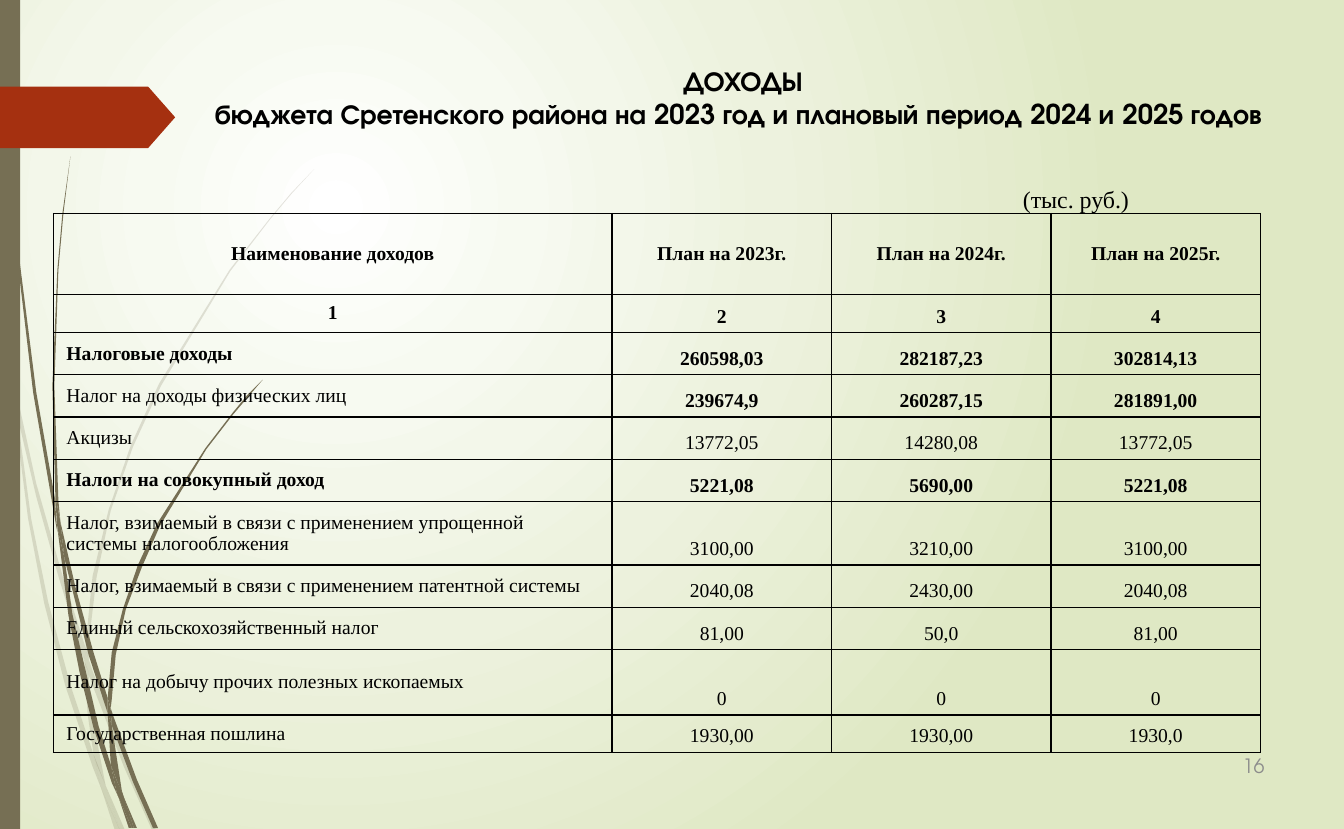
"""Build the slide with the district budget revenue table."""
from dataclasses import dataclass

from lxml import etree
from pptx import Presentation
from pptx.dml.color import RGBColor
from pptx.enum.shapes import MSO_SHAPE
from pptx.enum.text import MSO_ANCHOR, MSO_AUTO_SIZE, PP_ALIGN
from pptx.oxml import parse_xml
from pptx.oxml.ns import qn
from pptx.util import Inches, Pt

LEFT, CENTER, RIGHT = PP_ALIGN.LEFT, PP_ALIGN.CENTER, PP_ALIGN.RIGHT
TOP, MIDDLE, BOTTOM = MSO_ANCHOR.TOP, MSO_ANCHOR.MIDDLE, MSO_ANCHOR.BOTTOM
RECTANGLE, TAG = MSO_SHAPE.RECTANGLE, MSO_SHAPE.PENTAGON
FIXED_SIZE = MSO_AUTO_SIZE.NONE
DRAWING_NS = "http://schemas.openxmlformats.org/drawingml/2006/main"


@dataclass(frozen=True)
class Theme:
    """Colours, fonts and type sizes of the slide."""
    ink: str = "000000"
    muted: str = "8C8C8C"
    olive: str = "766F54"
    red: str = "A53010"
    glow: tuple = ((0, "FFFFFF"), (24, "F7FAF1"), (36, "F3F7EA"),
                   (55, "EDF2DE"), (100, "DFE8C4"))
    heading_font: str = "TeX Gyre Adventor"
    body_font: str = "Times New Roman"
    title_size: float = 19.6
    unit_size: float = 17.1
    number_size: float = 14.1
    table_size: float = 14
    border_width: float = 1


THEME = Theme()

TITLE = ("ДОХОДЫ\nбюджета Сретенского района на 2023 год "
         "и плановый период 2024 и 2025 годов ")
COLUMN_WIDTHS = (5.55, 2.18, 2.18, 2.08)
ROW_HEIGHTS = (0.8, 0.38, 0.42, 0.42, 0.42, 0.42, 0.63, 0.42, 0.42, 0.65, 0.37)
REVENUES = (
    ("Наименование доходов", "План на 2023г.", "План на 2024г.", "План на 2025г."),
    ("1", "2", "3", "4"),
    ("Налоговые доходы", "260598,03", "282187,23", "302814,13"),
    ("Налог на доходы физических лиц", "239674,9", "260287,15", "281891,00"),
    ("Акцизы", "13772,05", "14280,08", "13772,05"),
    ("Налоги на совокупный доход", "5221,08", "5690,00", "5221,08"),
    ("Налог, взимаемый в связи с применением упрощенной системы налогообложения",
     "3100,00", "3210,00", "3100,00"),
    ("Налог, взимаемый в связи с применением патентной системы",
     "2040,08", "2430,00", "2040,08"),
    ("Единый сельскохозяйственный налог", "81,00", "50,0", "81,00"),
    ("Налог на добычу прочих полезных ископаемых", "0", "0", "0"),
    ("Государственная пошлина", "1930,00", "1930,00", "1930,0"),
)
HEADER_ROWS = (0, 1)
BOLD_LABEL_ROWS = (0, 1, 2, 5)
BOLD_VALUE_ROWS = (0, 1, 2, 3, 5)

PALE_GRASS = (
    ((0.11, 3.84), (0.09, 3.53), (0, 3.09), (0, 3.28), (0.1, 3.78)),
    ((0.58, 5.72), (0.84, 6.57), (0.85, 6.43), (0.62, 5.71), (0.36, 4.8), (0.14, 3.79),
     (0.17, 4.12), (0.36, 4.93)),
    ((0.92, 6.66), (0.88, 6.54), (0.88, 6.7), (1.23, 7.61), (1.51, 8.24), (1.55, 8.24),
     (1.27, 7.59)),
    ((1.19, 8.24), (1.24, 8.24), (1.05, 7.8)),
    ((0.93, 7.49), (0.7, 6.8), (0.48, 5.98), (0.31, 5.15), (0.17, 4.12), (0.11, 3.84),
     (0.28, 5.15), (0.44, 5.99), (0.65, 6.81), (0.92, 7.61), (1.01, 7.84), (0.99, 7.76)),
    ((0.84, 6.57), (0.87, 7.09), (0.93, 7.49), (0.96, 7.59), (1.05, 7.8), (1.04, 7.75),
     (0.91, 7.08), (0.88, 6.7), (0.88, 6.67)),
    ((0.88, 6.4), (0.96, 5.73), (1.1, 5.07), (1.32, 4.44), (1.6, 3.83), (2.29, 2.69),
     (2.69, 2.17), (2.9, 1.92), (3.12, 1.68), (2.89, 1.92), (2.68, 2.17), (2.28, 2.68),
     (1.58, 3.81), (1.3, 4.42), (1.08, 5.06), (0.92, 5.72), (0.85, 6.4), (0.85, 6.43),
     (0.88, 6.54)),
    ((1.01, 7.84), (1.14, 8.24), (1.19, 8.24)),
    ((0.88, 6.67), (0.88, 6.7), (0.88, 6.54), (0.85, 6.43), (0.84, 6.58)),
    ((0.97, 7.59), (0.93, 7.49), (0.99, 7.76), (1.01, 7.84), (1.19, 8.24), (1.05, 7.8)),
)
DARK_GRASS = (
    ((0.07, 1.2), (0.17, 2.55), (0.33, 3.9), (0.56, 5.23), (0.57, 5.28), (0.55, 5.02),
     (0.55, 4.97), (0.36, 3.89), (0.19, 2.55), (0.08, 1.2), (0.05, 0.53), (0.04, 0),
     (0.03, 0), (0.04, 0.53)),
    ((0.88, 6.5), (1.07, 7.08), (1.07, 6.95), (1.07, 6.93), (0.93, 6.48), (0.75, 5.83),
     (0.6, 5.18), (0.64, 5.54)),
    ((1.13, 7.12), (1.1, 7.03), (1.11, 7.2), (1.32, 7.76), (1.52, 8.22), (1.57, 8.22),
     (1.36, 7.74)),
    ((1.1, 7.59), (0.98, 7.21), (0.72, 6.1), (0.64, 5.54), (0.57, 5.24), (0.68, 6.11),
     (0.79, 6.67), (0.93, 7.23), (1.11, 7.77), (1.18, 7.92), (1.16, 7.87)),
    ((0.6, 5.18), (0.58, 4.97), (0.54, 3.83), (0.58, 2.68), (0.63, 2.12), (0.7, 1.55),
     (0.62, 2.12), (0.57, 2.68), (0.52, 3.83), (0.55, 4.93), (0.6, 5.17)),
    ((1.33, 8.22), (1.36, 8.22), (1.22, 7.89)),
    ((0.57, 5.24), (0.64, 5.54), (0.6, 5.18), (0.55, 4.93), (0.55, 4.97)),
    ((1.11, 6.95), (1.15, 6.5), (1.25, 6.05), (1.41, 5.63), (1.59, 5.22), (2.05, 4.46),
     (2.32, 4.11), (2.61, 3.77), (2.45, 3.93), (2.31, 4.1), (2.04, 4.45), (1.56, 5.2),
     (1.37, 5.61), (1.22, 6.05), (1.11, 6.48), (1.07, 6.93), (1.1, 7.03)),
    ((1.18, 7.92), (1.28, 8.22), (1.31, 8.22)),
    ((1.07, 7.08), (1.1, 7.59), (1.16, 7.75), (1.22, 7.89), (1.21, 7.85), (1.11, 7.2),
     (1.09, 7.14)),
    ((1.07, 7.07), (1.09, 7.14), (1.11, 7.2), (1.1, 7.04), (1.07, 6.93), (1.07, 6.95)),
    ((1.16, 7.75), (1.1, 7.59), (1.16, 7.87), (1.18, 7.92), (1.31, 8.22), (1.33, 8.22),
     (1.22, 7.88)),
)


def paint_background(slide):
    """Give the slide a round glow that fades from white to green."""
    slide.background.fill.gradient()
    plain = slide._element.find(".//" + qn("a:gradFill"))
    stops = "".join(f'<a:gs pos="{place * 1000}"><a:srgbClr val="{color}"/></a:gs>'
                    for place, color in THEME.glow)
    plain.getparent().replace(plain, parse_xml(
        f'<a:gradFill xmlns:a="{DRAWING_NS}" rotWithShape="1"><a:gsLst>{stops}</a:gsLst>'
        '<a:path path="circle"><a:fillToRect l="50000" t="50000" r="100000" b="100000"/>'
        '</a:path></a:gradFill>'))


def paint_shape(shape, color):
    """Fill a shape with one colour, without line or shadow."""
    shape.shadow.inherit = False
    shape.fill.solid()
    shape.fill.fore_color.rgb = RGBColor.from_string(color)
    shape.line.fill.background()


def add_grass(slide, blades, opacity):
    """Draw a group of grass blades from their outlines."""
    grass = slide.shapes.add_group_shape()
    for outline in blades:
        start, *others = [(Inches(x), Inches(y)) for x, y in outline]
        builder = grass.shapes.build_freeform(*start)
        builder.add_line_segments(others, close=True)
        blade = builder.convert_to_shape()
        paint_shape(blade, THEME.olive)
        if opacity < 100:
            color = blade._element.spPr.find(".//" + qn("a:srgbClr"))
            etree.SubElement(color, qn("a:alpha"), val=str(opacity * 1000))


def add_block(slide, kind, left, top, width, height, color):
    """Add a plain filled shape and return it."""
    block = slide.shapes.add_shape(kind, Inches(left), Inches(top),
                                   Inches(width), Inches(height))
    paint_shape(block, color)
    return block


def write(frame, text, size, font, color=THEME.ink, bold=False, align=LEFT):
    """Set the text of a frame and format its runs."""
    frame.text = text
    for paragraph in frame.paragraphs:
        paragraph.alignment = align
        for run in paragraph.runs:
            run.font.size = Pt(size)
            run.font.name = font
            run.font.bold = bold
            run.font.color.rgb = RGBColor.from_string(color)


def set_frame(frame, anchor):
    """Set wrapping, margins and anchor of a text frame."""
    frame.word_wrap = True
    frame.auto_size = FIXED_SIZE
    frame.vertical_anchor = anchor
    frame.margin_left = frame.margin_right = Inches(0.12)
    frame.margin_top = frame.margin_bottom = Inches(0.06)


def add_label(slide, left, top, width, height, anchor, text, **style):
    """Add a text box."""
    label = slide.shapes.add_textbox(Inches(left), Inches(top),
                                     Inches(width), Inches(height))
    set_frame(label.text_frame, anchor)
    write(label.text_frame, text, **style)


def set_title(slide):
    """Place and format the title."""
    title = slide.shapes.title
    title.left, title.top = Inches(1.63), Inches(0.57)
    title.width, title.height = Inches(11.5), Inches(0.78)
    set_frame(title.text_frame, MIDDLE)
    write(title.text_frame, TITLE, THEME.title_size, THEME.heading_font,
          bold=True, align=CENTER)


def format_cell(cell):
    """Clear the fill of a cell, set its margins and draw its borders."""
    cell.margin_left = cell.margin_right = Inches(0.13)
    cell.margin_top = cell.margin_bottom = Inches(0.05)
    cell.fill.background()
    properties = cell._tc.get_or_add_tcPr()
    for position, side in enumerate(("lnL", "lnR", "lnT", "lnB")):
        properties.insert(position, parse_xml(
            f'<a:{side} xmlns:a="{DRAWING_NS}" w="{Pt(THEME.border_width)}"><a:solidFill>'
            f'<a:srgbClr val="{THEME.ink}"/></a:solidFill></a:{side}>'))


def add_revenue_table(slide):
    """Add the table of planned revenues."""
    table = slide.shapes.add_table(
        len(REVENUES), len(COLUMN_WIDTHS), Inches(0.53), Inches(2.12),
        Inches(sum(COLUMN_WIDTHS)), Inches(sum(ROW_HEIGHTS))).table
    table.first_row = table.horz_banding = False
    for column, width in zip(table.columns, COLUMN_WIDTHS):
        column.width = Inches(width)
    for row, height in zip(table.rows, ROW_HEIGHTS):
        row.height = Inches(height)
    for r, revenue in enumerate(REVENUES):
        for c, text in enumerate(revenue):
            cell = table.cell(r, c)
            is_label = c == 0
            format_cell(cell)
            cell.vertical_anchor = MIDDLE if is_label or r == 0 else BOTTOM
            write(cell.text_frame, text, THEME.table_size, THEME.body_font,
                  bold=r in (BOLD_LABEL_ROWS if is_label else BOLD_VALUE_ROWS),
                  align=LEFT if is_label and r not in HEADER_ROWS else CENTER)


def main():
    """Build and save the slide."""
    deck = Presentation()
    deck.slide_width, deck.slide_height = Inches(13.35), Inches(8.23)
    slide = deck.slides.add_slide(deck.slide_layouts[5])
    paint_background(slide)
    add_grass(slide, PALE_GRASS, 20)
    add_grass(slide, DARK_GRASS, 100)
    add_block(slide, RECTANGLE, 0, 0, 0.2, 8.23, THEME.olive)
    number_tag = add_block(slide, TAG, 0, 0.86, 1.74, 0.61, THEME.red)
    number_tag.adjustments[0] = 0.44
    add_label(slide, 9.57, 7.4, 3.11, 0.41, MIDDLE, "16", size=THEME.number_size,
              font=THEME.heading_font, color=THEME.muted, align=RIGHT)
    set_title(slide)
    add_revenue_table(slide)
    add_label(slide, 10.04, 1.77, 2.21, 0.42, TOP, "(тыс. руб.)",
              size=THEME.unit_size, font=THEME.body_font)
    deck.save("out.pptx")


if __name__ == "__main__":
    main()
